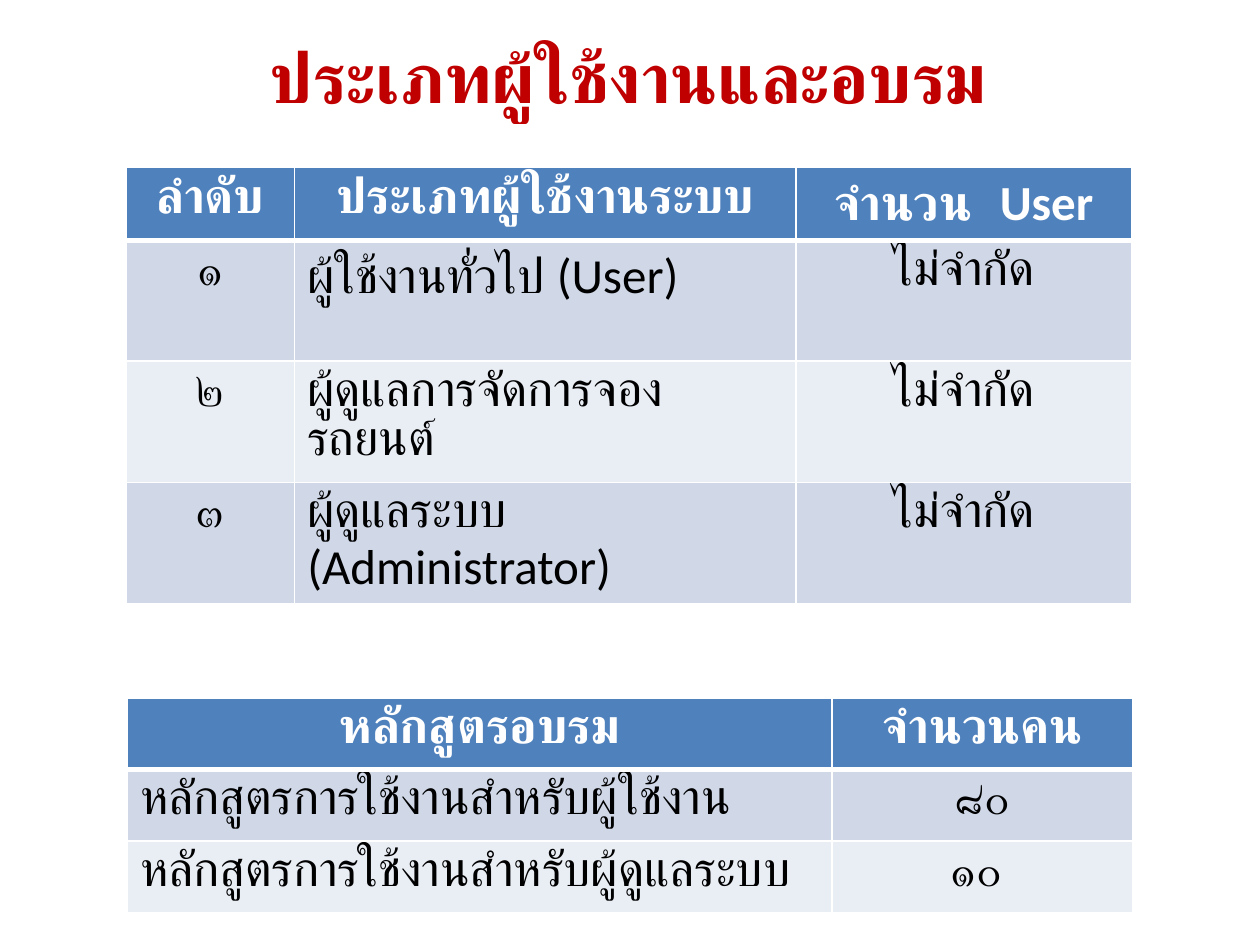
from dataclasses import dataclass

import pptx
import pptx.dml.color
import pptx.enum.text
import pptx.oxml
import pptx.oxml.ns
import pptx.util
from pptx.util import Cm

CENTER = pptx.enum.text.PP_ALIGN.CENTER
LEFT = pptx.enum.text.PP_ALIGN.LEFT


@dataclass(frozen=True)
class Theme:
    font: str = "Calibri"
    title_size: int = 40
    table_size: int = 28
    title: str = "C00000"
    header_text: str = "FFFFFF"
    body_text: str = "000000"
    header_fill: str = "4F81BD"
    bands: tuple = ("D0D8E8", "E9EDF4")
    border: str = "FFFFFF"
    border_width: int = 1
    header_rule: int = 3


THEME = Theme()

USER_ROWS = [
    ("ลำดับ", "ประเภทผู้ใช้งานระบบ", "จำนวน  User"),
    ("๑", "ผู้ใช้งานทั่วไป (User)", "ไม่จำกัด"),
    ("๒", "ผู้ดูแลการจัดการจองรถยนต์", "ไม่จำกัด"),
    ("๓", "ผู้ดูแลระบบ (Administrator)", "ไม่จำกัด"),
]
COURSE_ROWS = [
    ("หลักสูตรอบรม", "จำนวนคน"),
    ("หลักสูตรการใช้งานสำหรับผู้ใช้งาน", "๘๐"),
    ("หลักสูตรการใช้งานสำหรับผู้ดูแลระบบ", "๑๐ "),
]


def rgb(value):
    return pptx.dml.color.RGBColor.from_string(value)


def write(tf, text, size, color, bold, align):
    p = tf.paragraphs[0]
    p.text = text
    p.alignment = align
    p.font.name = THEME.font
    p.font.size = pptx.util.Pt(size)
    p.font.bold = bold
    p.font.color.rgb = rgb(color)


def set_borders(cell, widths):
    """Draw the left, right, top and bottom lines, which must precede the fill."""
    tc_pr = cell._tc.get_or_add_tcPr()
    for i, (side, width) in enumerate(zip("LRTB", widths)):
        line = pptx.oxml.parse_xml(
            f'<a:ln{side} {pptx.oxml.ns.nsdecls("a")} w="{pptx.util.Pt(width)}">'
            f'<a:solidFill><a:srgbClr val="{THEME.border}"/></a:solidFill></a:ln{side}>'
        )
        tc_pr.insert(i, line)


def add_title(slide, text):
    sp = slide.shapes.add_textbox(Cm(-0.03), Cm(0.56), Cm(25.4), Cm(1.96))
    tf = sp.text_frame
    tf.word_wrap = True
    tf.auto_size = pptx.enum.text.MSO_AUTO_SIZE.SHAPE_TO_FIT_TEXT
    write(tf, text, THEME.title_size, THEME.title, True, CENTER)


def add_banded_table(slide, left, top, widths, heights, rows, text_column):
    """Add a table with a header row; body cells of text_column align left."""
    table = slide.shapes.add_table(
        len(rows), len(widths), Cm(left), Cm(top), Cm(sum(widths)), Cm(sum(heights))
    ).table
    for column, width in zip(table.columns, widths):
        column.width = Cm(width)
    for i, (values, height) in enumerate(zip(rows, heights)):
        table.rows[i].height = Cm(height)
        header = i == 0
        fill = THEME.header_fill if header else THEME.bands[(i - 1) % 2]
        color = THEME.header_text if header else THEME.body_text
        thin = THEME.border_width
        above = THEME.header_rule if i == 1 else thin
        below = THEME.header_rule if header else thin
        for j, text in enumerate(values):
            cell = table.cell(i, j)
            cell.fill.solid()
            cell.fill.fore_color.rgb = rgb(fill)
            set_borders(cell, (thin, thin, above, below))
            align = LEFT if j == text_column and not header else CENTER
            write(cell.text_frame, text, THEME.table_size, color, header, align)


def main():
    prs = pptx.Presentation()
    prs.slide_width, prs.slide_height = Cm(25.4), Cm(19.05)
    slide = prs.slides.add_slide(prs.slide_layouts[6])
    add_banded_table(slide, 2.54, 3.38, (3.4, 10.11, 6.76),
                     (1.44, 2.44, 2.44, 2.44), USER_ROWS, text_column=1)
    add_title(slide, "ประเภทผู้ใช้งานและอบรม")
    add_banded_table(slide, 2.57, 14.07, (14.2, 6.07),
                     (1.44, 1.44, 1.44), COURSE_ROWS, text_column=0)
    prs.save("out.pptx")


if __name__ == "__main__":
    main()
